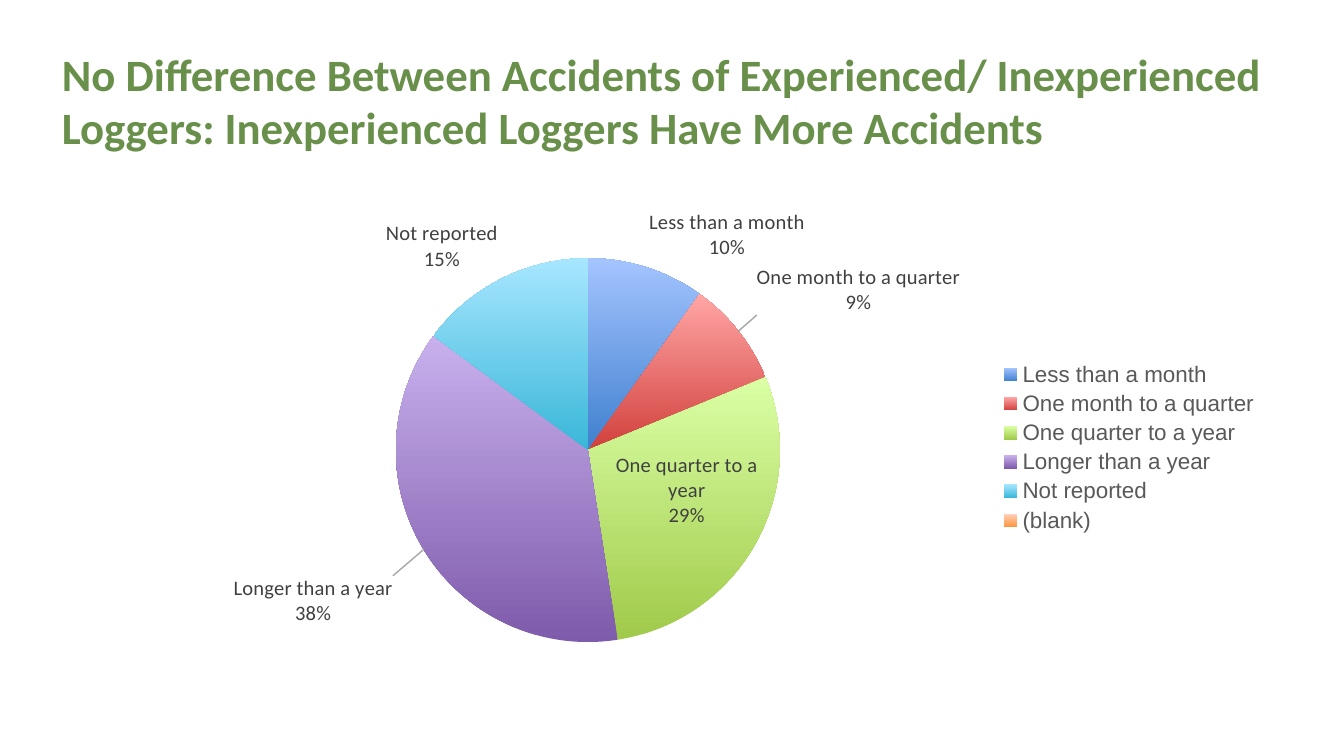
from lxml.etree import fromstring
from pptx import Presentation
from pptx.chart.data import CategoryChartData
from pptx.dml.color import RGBColor
from pptx.enum.chart import XL_CHART_TYPE, XL_LABEL_POSITION, XL_LEGEND_POSITION
from pptx.enum.text import MSO_ANCHOR
from pptx.util import Inches, Pt

W = 10
H = W * 9 / 16
TITLE = ("No Difference Between Accidents of Experienced/ Inexperienced "
         "Loggers: Inexperienced Loggers Have More Accidents")
# Category, share, bottom colour, top colour
PARTS = [
    ("Less than a month", 10, "3F80CE", "A4C4FF"),
    ("One month to a quarter", 9, "D1403C", "FFA6A5"),
    ("One quarter to a year", 29, "A0CA4A", "DAFFA5"),
    ("Longer than a year", 38, "7F5BAB", "C8B0ED"),
    ("Not reported", 15, "39B7D8", "A7E6FF"),
    ("(blank)", None, "FF953E", "FFD2BD"),
]
PLOT = dict(xMode="edge", yMode="edge", x=0.22, y=0.16, w=0.42, h=0.69)
# Labels outside the pie: slice and shift, as shares of the chart
OUTER = {0: None, 1: dict(x=0.01, y=-0.02), 3: dict(x=-0.02, y=0.04)}
NS = ('xmlns:c="http://schemas.openxmlformats.org/drawingml/2006/chart" '
      'xmlns:a="http://schemas.openxmlformats.org/drawingml/2006/main"')


def color(code):
    return RGBColor.from_string(code)


def style(font, size, code, name="Calibri", bold=False):
    font.size, font.name, font.bold = Pt(size), name, bold
    font.color.rgb = color(code)


def add_text(slide, text, box, fill, **form):
    shape = slide.shapes.add_textbox(*[Inches(n) for n in box])
    shape.fill.solid()
    shape.fill.fore_color.rgb = color(fill)
    frame = shape.text_frame
    frame.word_wrap = True
    frame.vertical_anchor = MSO_ANCHOR.MIDDLE
    frame.margin_left = frame.margin_right = Inches(0.07)
    frame.margin_top = frame.margin_bottom = Inches(0.04)
    run = frame.paragraphs[0].add_run()
    run.text = text
    style(run.font, **form)


def node(body):
    return fromstring(body.replace(">", f" {NS}>", 1))


def layout(spots, target=""):
    tags = target + "".join(f'<c:{k} val="{v}"/>' for k, v in spots.items())
    return node(f"<c:layout><c:manualLayout>{tags}</c:manualLayout></c:layout>")


def break_line(item):
    item.find("{*}showBubbleSize").addnext(node("<c:separator>\n</c:separator>"))


deck = Presentation()
deck.slide_width, deck.slide_height = Inches(W), Inches(H)
slide = deck.slides.add_slide(deck.slide_layouts[6])

# Title
add_text(slide, TITLE, (0.39, 0.23, 9.28, 1.03), "FFFFFF",
         size=24, code="69904A", bold=True)

# Pie chart
data = CategoryChartData()
data.categories = [part[0] for part in PARTS]
data.add_series("Series 1", [part[1] for part in PARTS])
box = [Inches(n) for n in (0.53, 1.26, 8.94, 4.14)]
chart = slide.shapes.add_chart(XL_CHART_TYPE.PIE, *box, data).chart
chart.has_title = False
style(chart.font, 10, "000000", "Arial")
chart.has_legend = True
chart.legend.position = XL_LEGEND_POSITION.RIGHT
chart.legend.include_in_layout = False
style(chart.legend.font, 12, "595959", "Arial")
pie = chart.plots[0]
pie.vary_by_categories = True

# Plot area
area = chart.element.find(".//{*}plotArea")
for old in area.findall("{*}layout"):
    area.remove(old)
area.insert(0, layout(PLOT, '<c:layoutTarget val="inner"/>'))

# Slices
series = pie.series[0]
for i, (_, _, low, high) in enumerate(PARTS):
    fill = series.points[i].format.fill
    fill.gradient()
    fill.gradient_angle = 90
    for stop, code in zip(fill.gradient_stops, (low, high)):
        stop.color.rgb = color(code)

# Labels with leader lines
labels = series.data_labels
labels.show_value = False
labels.show_category_name = labels.show_percentage = True
labels.position = XL_LABEL_POSITION.BEST_FIT
style(labels.font, 11, "404040")
root = labels._element
break_line(root)
root.find("{*}showLeaderLines").addnext(node(
    '<c:leaderLines><c:spPr><a:ln w="9525"><a:solidFill><a:srgbClr val="A6A6A6"/>'
    "</a:solidFill></a:ln></c:spPr></c:leaderLines>"))

# Labels outside the pie
for i, shift in OUTER.items():
    label = series.points[i].data_label
    label.position = XL_LABEL_POSITION.OUTSIDE_END
    style(label.font, 11, "404040")
    item = root.findall("{*}dLbl")[-1]
    if shift:
        item.find("{*}idx").addnext(layout(shift))
    for tag, val in (("Val", "0"), ("CatName", "1"), ("Percent", "1")):
        item.find("{*}show" + tag).set("val", val)
    break_line(item)

deck.save("out.pptx")
